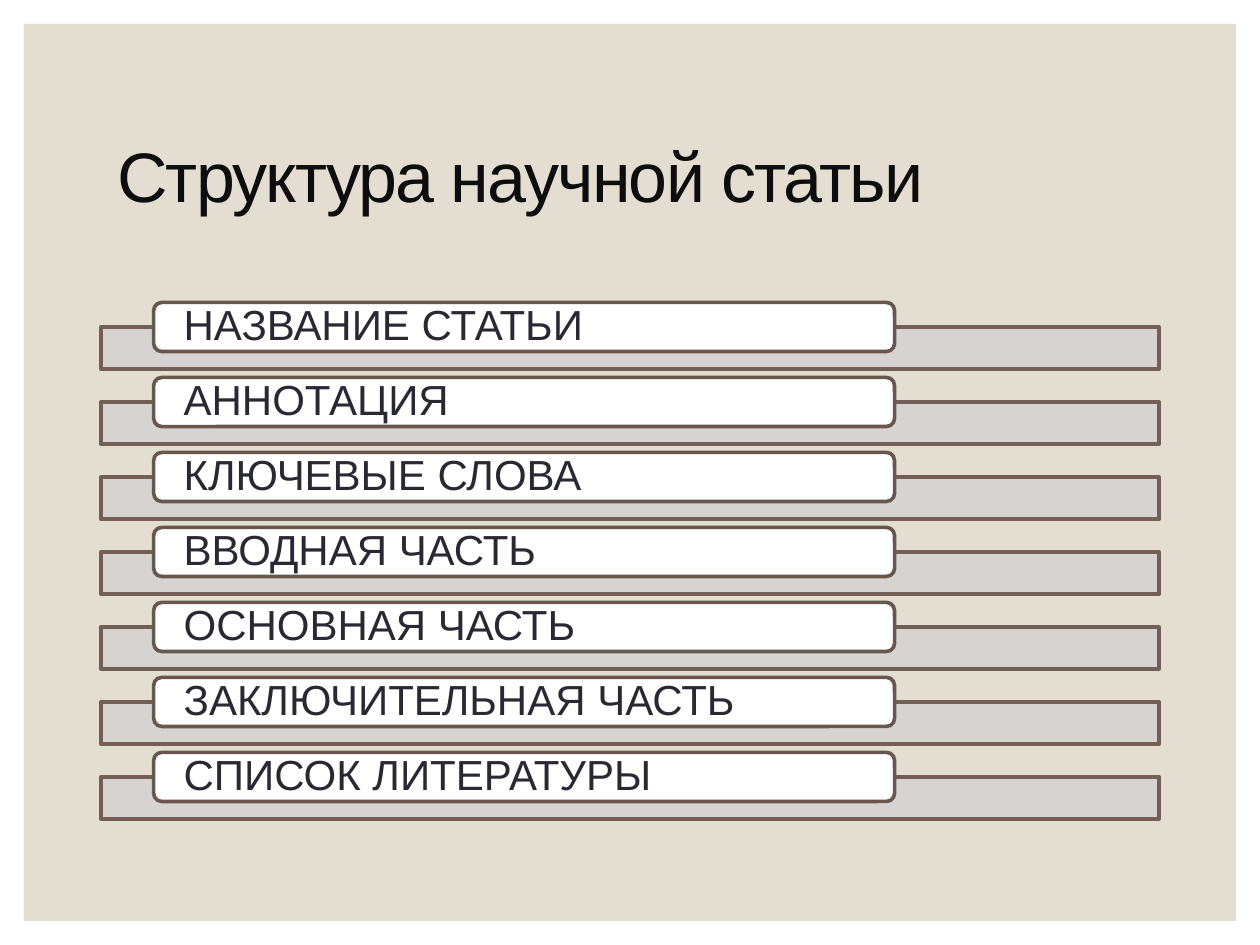
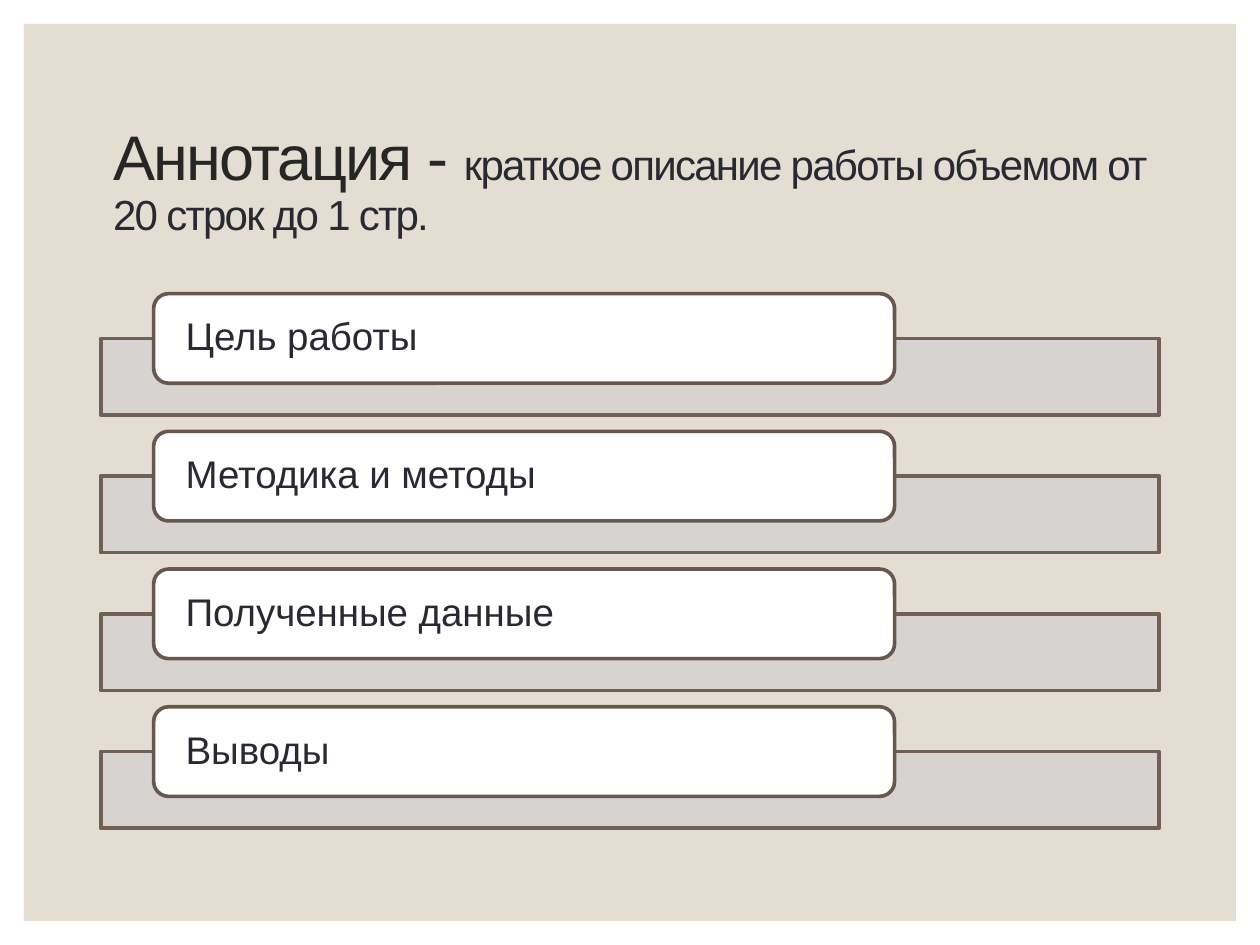
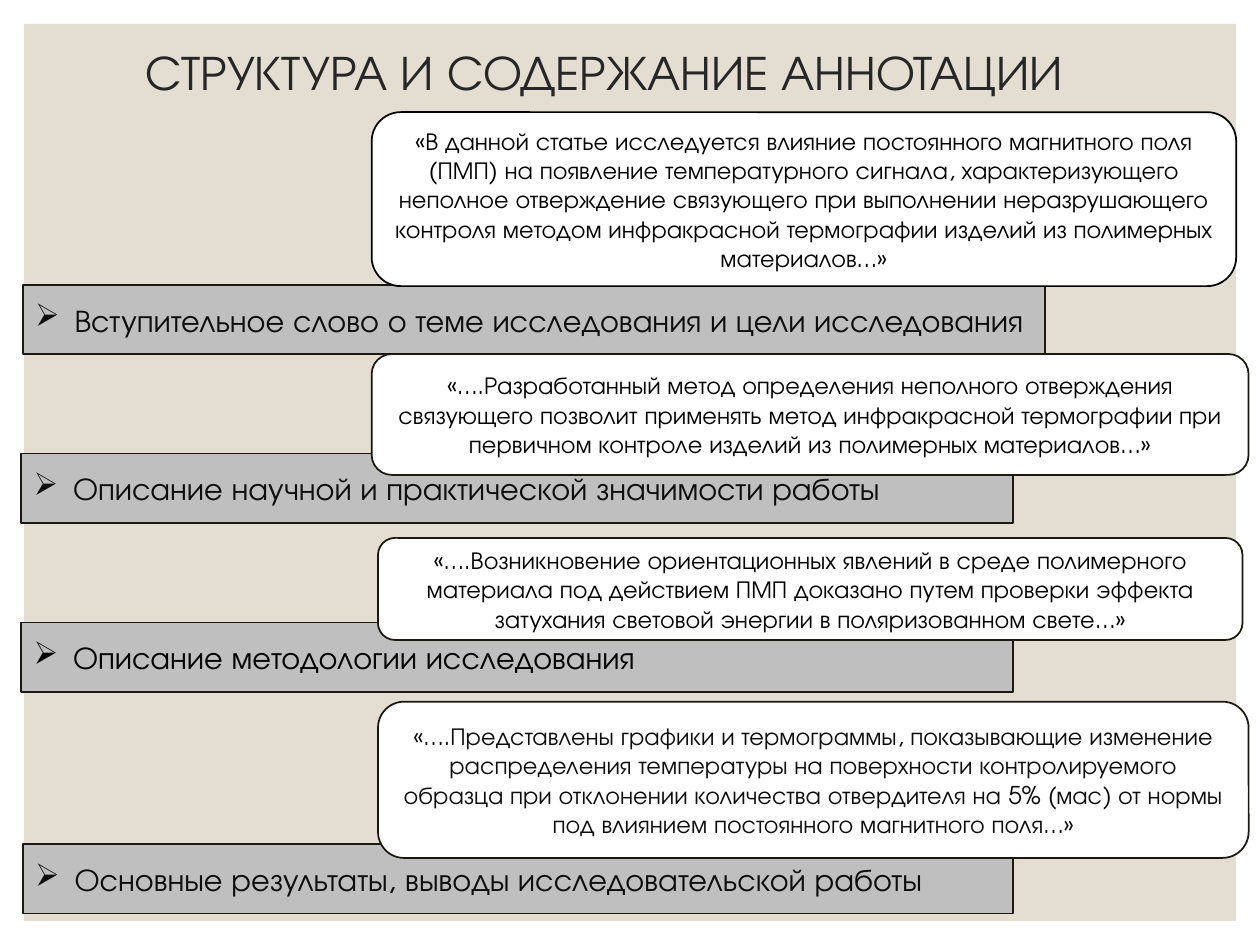
from dataclasses import dataclass

from lxml import etree
from pptx import Presentation
from pptx.dml.color import RGBColor
from pptx.enum import shapes, text
from pptx.oxml import ns
from pptx.util import Pt


@dataclass(frozen=True)
class Theme:
    # Colours
    frame: str = "E3DED1"
    white: str = "FFFFFF"
    black: str = "000000"
    ink: str = "0D0D0D"
    heading: str = "262626"
    body: str = "292934"
    band: str = "D5D2D1"
    band_line: str = "726056"
    card_line: str = "67574E"
    bar: str = "BFBFBF"
    bar_line: str = "1B1810"
    # Fonts
    sans: str = "Arial"
    display: str = "TeX Gyre Adventor"
    # Type sizes
    title: int = 40
    term: int = 36
    caps_title: int = 28
    large: int = 24
    medium: int = 22
    label: int = 18
    quote: int = 14


THEME = Theme()
SLIDE_W, SLIDE_H = 720, 540
FRAME_MARGIN = 13.7
BAND_LEFT, BAND_W = 57.6, 604.8
CARD_LEFT, CARD_W = 87.8, 423.4
BAND_RATIO = 0.855  # band height relative to card height

SECTIONS = ["НАЗВАНИЕ СТАТЬИ", "АННОТАЦИЯ", "КЛЮЧЕВЫЕ СЛОВА", "ВВОДНАЯ ЧАСТЬ",
            "ОСНОВНАЯ ЧАСТЬ", "ЗАКЛЮЧИТЕЛЬНАЯ ЧАСТЬ", "СПИСОК ЛИТЕРАТУРЫ"]
ABSTRACT_PARTS = ["Цель работы", "Методика и методы", "Полученные данные", "Выводы"]

# Each entry: label, its box, label colour, quote, its box, quote colour, quote line
EXAMPLES = [
    ("Вступительное слово о теме исследования и цели исследования",
     (13, 162.7, 584, 39.6), THEME.ink,
     "«В данной статье исследуется влияние постоянного магнитного поля (ПМП) на появление "
     "температурного сигнала, характеризующего неполное отверждение связующего при "
     "выполнении неразрушающего контроля методом инфракрасной термографии изделий из "
     "полимерных материалов…»",
     (212.4, 64.1, 494, 99.4), THEME.black, THEME.black),
    ("Описание научной и практической значимости работы",
     (12.2, 259.2, 566.6, 39.6), THEME.ink,
     "«….Разработанный метод определения неполного отверждения связующего позволит "
     "применять метод инфракрасной термографии при первичном контроле изделий из "
     "полимерных материалов…»",
     (212.4, 202.3, 501.1, 69.1), THEME.black, THEME.bar_line),
    ("Описание методологии исследования",
     (12.2, 355.7, 566.6, 39.6), THEME.black,
     "«….Возникновение ориентационных явлений в среде полимерного материала под действием "
     "ПМП доказано путем проверки эффекта затухания световой энергии в поляризованном "
     "свете…»",
     (216, 307.4, 494, 58.3), THEME.black, THEME.bar_line),
    ("Основные результаты, выводы исследовательской работы",
     (13, 482.4, 566, 39.6), THEME.ink,
     "«….Представлены графики и термограммы, показывающие изменение распределения "
     "температуры на поверхности контролируемого образца при отклонении количества "
     "отвердителя на 5% (мас) от нормы под влиянием постоянного магнитного поля…»",
     (216, 401, 497.5, 89.3), THEME.ink, THEME.bar_line),
]


def set_font(font, name, size, color):
    font.name = name
    font.size = Pt(size)
    font.color.rgb = RGBColor.from_string(color)


def add_block(slide, preset, box, fill, line=None, weight=1.0):
    block = slide.shapes.add_shape(preset, *map(Pt, box))
    block.shadow.inherit = False
    block.fill.solid()
    block.fill.fore_color.rgb = RGBColor.from_string(fill)
    if line:
        block.line.color.rgb = RGBColor.from_string(line)
        block.line.width = Pt(weight)
    else:
        block.line.fill.background()
    return block


def write(block, content, name, size, color, align=text.PP_ALIGN.LEFT):
    frame = block.text_frame
    frame.word_wrap = True
    frame.vertical_anchor = text.MSO_ANCHOR.MIDDLE
    paragraph = frame.paragraphs[0]
    paragraph.text = content
    paragraph.alignment = align
    set_font(paragraph.font, name, size, color)
    return paragraph


def add_framed_slide(deck):
    slide = deck.slides.add_slide(deck.slide_layouts[6])
    add_block(slide, shapes.MSO_SHAPE.RECTANGLE,
              (FRAME_MARGIN, FRAME_MARGIN,
               SLIDE_W - 2 * FRAME_MARGIN, SLIDE_H - 2 * FRAME_MARGIN), THEME.frame)
    return slide


def add_title(slide, box, parts, name=THEME.sans, spacing=-1):
    """Write a title from (wording, size, colour) parts."""
    title = slide.shapes.add_textbox(*map(Pt, box)).text_frame
    title.word_wrap = True
    title.vertical_anchor = text.MSO_ANCHOR.MIDDLE
    paragraph = title.paragraphs[0]
    paragraph.line_spacing = 0.9
    for wording, size, color in parts:
        run = paragraph.add_run()
        run.text = wording
        set_font(run.font, name, size, color)
        if spacing:
            run.font._element.set("spc", str(spacing * 100))


def add_card_list(slide, items, top, step, card_h, size):
    """Stack cards, each over a band that starts at the card's mid-height."""
    for index, item in enumerate(items):
        card_top = top + index * step
        band = add_block(slide, shapes.MSO_SHAPE.RECTANGLE,
                         (BAND_LEFT, card_top + card_h / 2, BAND_W, card_h * BAND_RATIO),
                         THEME.band, THEME.band_line, 2.08)
        color = band.fill._xPr.find(".//" + ns.qn("a:srgbClr"))
        etree.SubElement(color, ns.qn("a:alpha"), val="90000")

        card = add_block(slide, shapes.MSO_SHAPE.ROUNDED_RECTANGLE,
                         (CARD_LEFT, card_top, CARD_W, card_h),
                         THEME.white, THEME.card_line, 2.08)
        write(card, item, THEME.sans, size, THEME.body).line_spacing = 0.9
        inner = card.text_frame
        inner.margin_left = inner.margin_right = Pt(15.8)
        inner.margin_top = inner.margin_bottom = 0


def add_label_bar(slide, label, box, color):
    bar = add_block(slide, shapes.MSO_SHAPE.FLOWCHART_PROCESS, box,
                    THEME.bar, THEME.bar_line)
    paragraph = write(bar, label, THEME.display, THEME.label, color)
    properties = paragraph._p.get_or_add_pPr()
    indent = Pt(22.5)
    properties.set("marL", str(indent))
    properties.set("indent", str(-indent))
    bullet = etree.Element(ns.qn("a:buChar"), char="➢")
    properties.insert(0, bullet)


def add_quote(slide, quote, box, color, line):
    card = add_block(slide, shapes.MSO_SHAPE.ROUNDED_RECTANGLE, box, THEME.white, line)
    write(card, quote, THEME.display, THEME.quote, color, text.PP_ALIGN.CENTER)


def main():
    deck = Presentation()
    deck.slide_width, deck.slide_height = Pt(SLIDE_W), Pt(SLIDE_H)

    # Structure of the article
    article = add_framed_slide(deck)
    add_title(article, (59.8, 49, 604.8, 108),
              [("Структура научной статьи", THEME.title, THEME.ink)])
    add_card_list(article, SECTIONS, 172.8, 42.85, 28.1, THEME.large)

    # Parts of the abstract
    abstract = add_framed_slide(deck)
    add_title(abstract, (57.6, 50.4, 604.8, 108),
              [("Аннотация - ", THEME.term, THEME.heading),
               ("краткое описание работы объемом от 20 строк до 1 стр.",
                THEME.large, THEME.body)])
    add_card_list(abstract, ABSTRACT_PARTS, 167.8, 78.7, 51.2, THEME.medium)

    # Abstract with example quotes
    examples = add_framed_slide(deck)
    add_title(examples, (76.3, 8, 630, 69),
              [("СТРУКТУРА И СОДЕРЖАНИЕ АННОТАЦИИ", THEME.caps_title, THEME.heading)],
              THEME.display, spacing=0)
    for label, bar_box, label_color, quote, quote_box, quote_color, line in EXAMPLES:
        add_label_bar(examples, label, bar_box, label_color)
        add_quote(examples, quote, quote_box, quote_color, line)

    deck.save("out.pptx")


if __name__ == "__main__":
    main()
